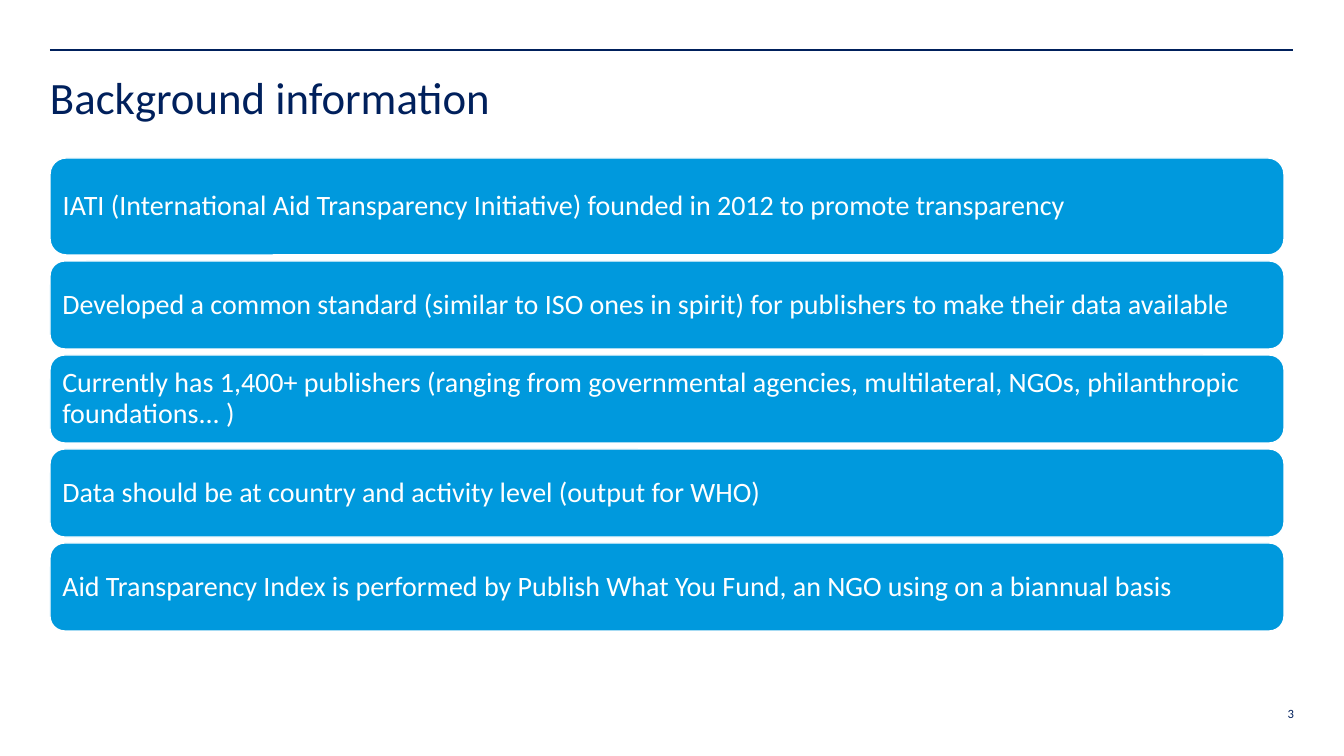
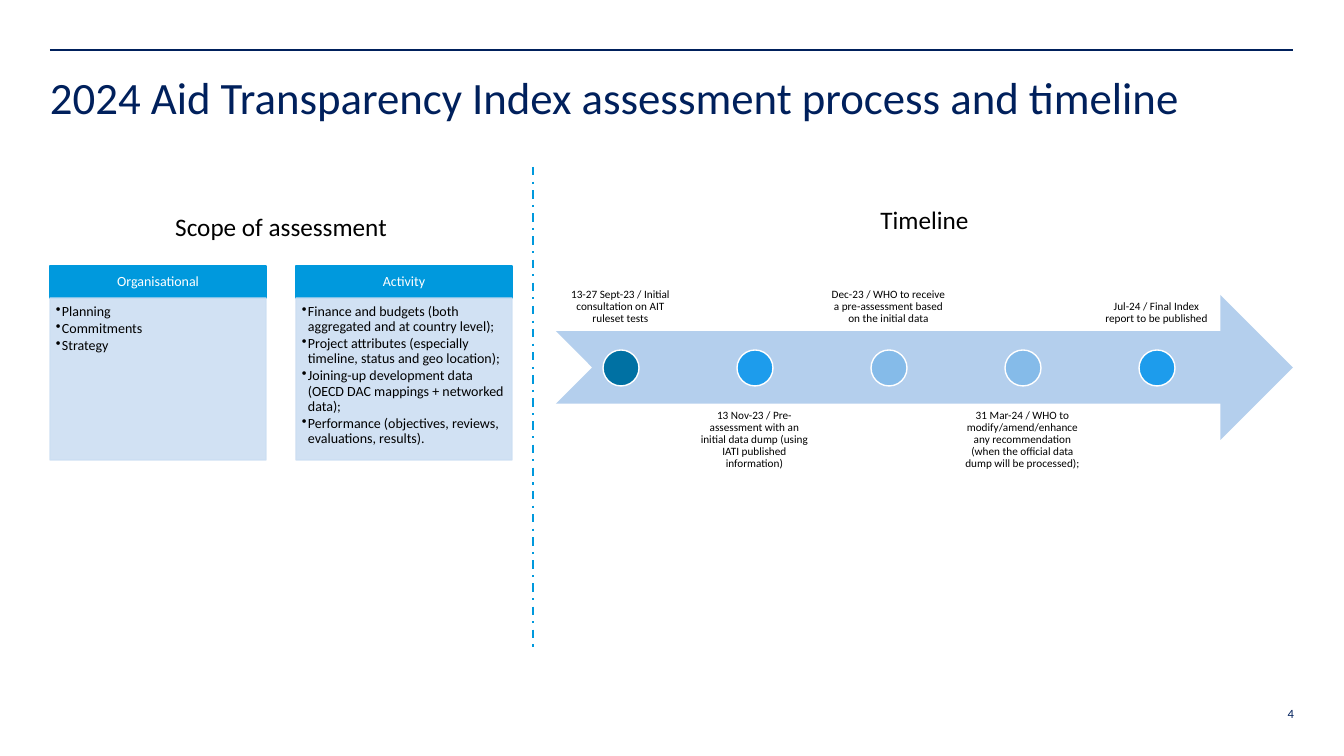
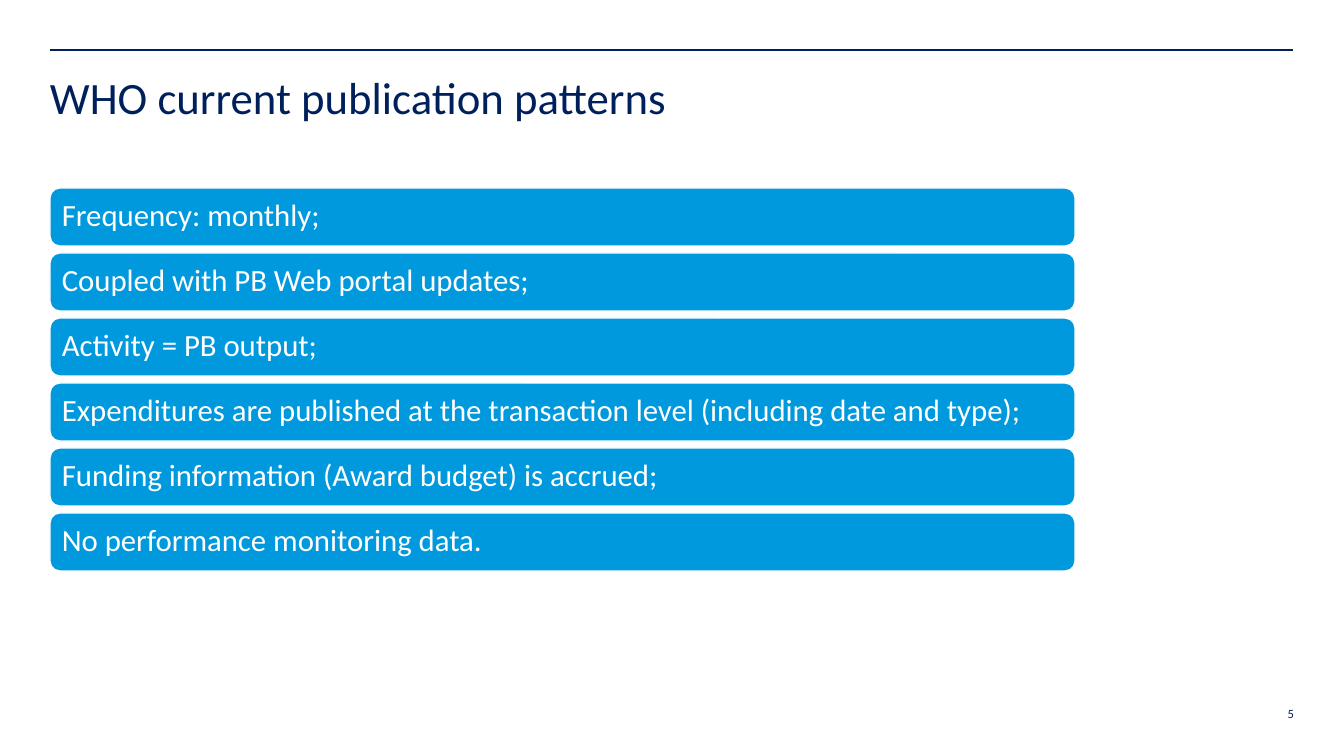
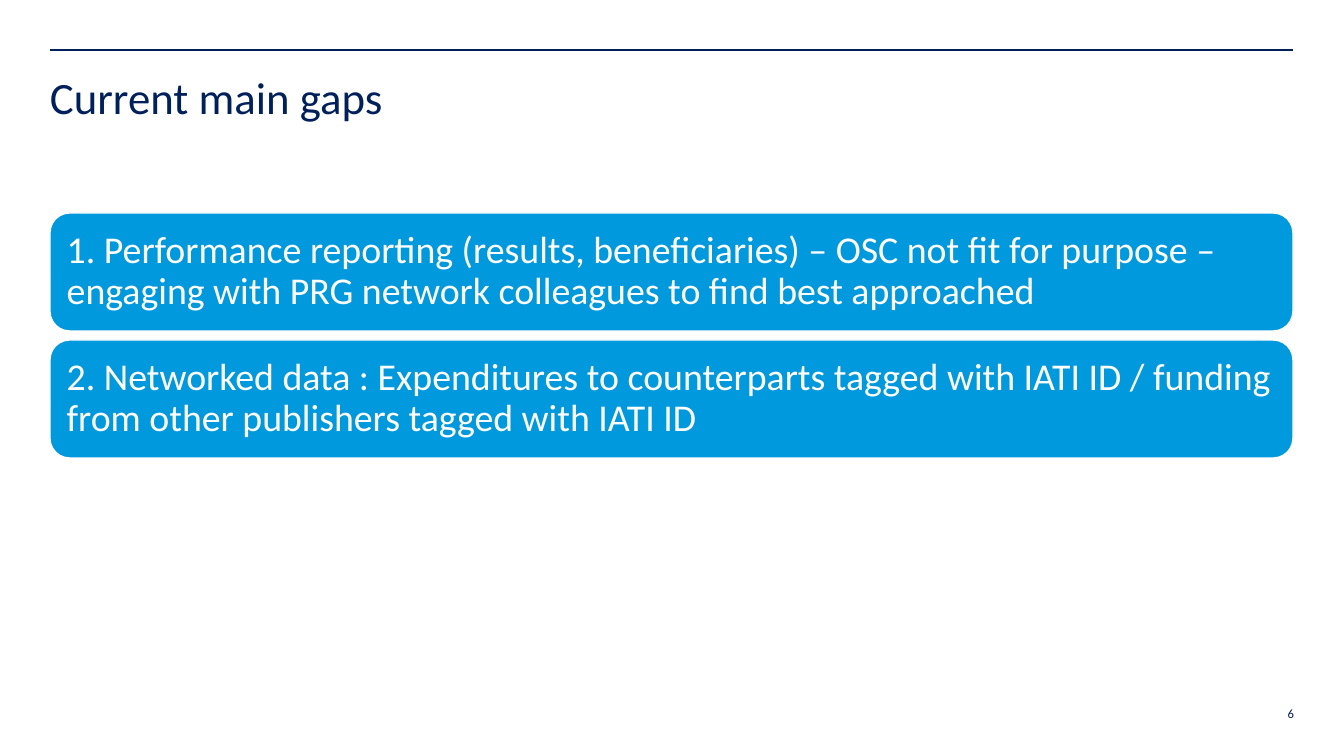
from lxml import etree
from pptx import Presentation
from pptx import util as u
from pptx.dml.color import RGBColor
from pptx.enum import dml, shapes, text
from pptx.oxml.ns import qn

PX = 9071  # EMU in one px
NAVY, BLUE, PALE, WHITE, BLACK = "00205C", "0099DD", "CCDEF2", "FFFFFF", "000000"
LEFT, WIDTH = 50, 1243
ROUND = shapes.MSO_SHAPE.ROUNDED_RECTANGLE
RECT = shapes.MSO_SHAPE.RECTANGLE
CENTER, RIGHT = text.PP_ALIGN.CENTER, text.PP_ALIGN.RIGHT
TOP, MIDDLE, BOTTOM = text.MSO_ANCHOR.TOP, text.MSO_ANCHOR.MIDDLE, text.MSO_ANCHOR.BOTTOM


def rgb(value):
    return RGBColor.from_string(value)


def box(s, content, at, kind=None, fill=None, line=None, size=10, color=BLACK,
        align=text.PP_ALIGN.LEFT, anchor=TOP, insets=(0, 0, 0, 0),
        spacing=0.9, bullet=False, opacity=100):
    """Add a preset shape, or a text box without kind; each line of content is a paragraph."""
    at = [n * PX for n in at]
    if kind is None:
        sp = s.shapes.add_textbox(*at)
    else:
        sp = s.shapes.add_shape(kind, *at)
        sp.shadow.inherit = False
        sp.fill.solid()
        sp.fill.fore_color.rgb = rgb(fill)
        if line:
            sp.line.color.rgb = rgb(line)
            sp.line.width = u.Pt(1)
        else:
            sp.line.fill.background()
        if opacity < 100:
            for clr in sp._element.spPr.iter(qn("a:srgbClr")):
                etree.SubElement(clr, qn("a:alpha"), val=str(opacity * 1000))
    if not content:
        return
    tf = sp.text_frame
    tf.word_wrap = True
    tf.vertical_anchor = anchor
    tf.margin_left, tf.margin_top, tf.margin_right, tf.margin_bottom = [n * PX for n in insets]
    for i, words in enumerate(content.split("\n")):
        p = tf.paragraphs[0] if i == 0 else tf.add_paragraph()
        p.alignment = align
        p.line_spacing = spacing
        if bullet:
            p.space_after = u.Pt(1.5)
            pPr = p._p.get_or_add_pPr()
            pPr.set("marL", str(6 * PX))
            pPr.set("indent", str(-6 * PX))
            etree.SubElement(pPr, qn("a:buChar"), char="•")
        r = p.add_run()
        r.text = words
        r.font.name = "Calibri"
        r.font.size = u.Pt(size)
        r.font.color.rgb = rgb(color)


prs = Presentation()
prs.slide_width, prs.slide_height = 1344 * PX, 756 * PX

# Titles and page numbers
titles = [
    "Background information",
    "2024 Aid Transparency Index assessment process and timeline",
    "WHO current publication patterns",
    "Current main gaps",
]
slides = []
for number, title in enumerate(titles, 3):
    s = prs.slides.add_slide(prs.slide_layouts[6])
    box(s, title, (LEFT, 76, WIDTH, 111), size=32, color=NAVY)
    box(s, str(number), (1252, 706, 42, 35), size=9, color=NAVY, align=RIGHT, spacing=1.0)
    slides.append(s)
background, process, patterns, gaps = slides

# Stacks of bars: slide, top, width, gap, text size, inset, bars as (height, text)
stacks = [
    (background, 158, 1234, 6, 20, 8, [
        (97, "IATI (International Aid Transparency Initiative) founded in 2012 to promote transparency"),
        (88, "Developed a common standard (similar to ISO ones in spirit) for publishers to make their data available"),
        (88, "Currently has 1,400+ publishers (ranging from governmental agencies, multilateral, NGOs, philanthropic foundations... )"),
        (88, "Data should be at country and activity level (output for WHO)"),
        (88, "Aid Transparency Index is performed by Publish What You Fund, an NGO using on a biannual basis"),
    ]),
    (patterns, 188, 1025, 7, 22, 9, [
        (58, "Frequency: monthly;"),
        (58, "Coupled with PB Web portal updates;"),
        (58, "Activity = PB output;"),
        (58, "Expenditures are published at the transaction level (including date and type);"),
        (58, "Funding information (Award budget) is accrued;"),
        (58, "No performance monitoring data."),
    ]),
    (gaps, 213, WIDTH, 9, 27, 11, [
        (118, "1. Performance reporting (results, beneficiaries) – OSC not fit for purpose – engaging with PRG network colleagues to find best approached"),
        (118, "2. Networked data : Expenditures to counterparts tagged with IATI ID / funding from other publishers tagged with IATI ID"),
    ]),
]
for s, top, width, gap, size, inset, bars in stacks:
    for height, words in bars:
        box(s, words, (LEFT, top, width, height), ROUND, BLUE, WHITE, size=size,
            color=WHITE, anchor=MIDDLE, insets=[inset] * 4)
        top += height + gap

# Timeline
box(process, "", (556, 295, 737, 145), shapes.MSO_SHAPE.NOTCHED_RIGHT_ARROW, "B4CFED")
milestones = [
    ("0071A3", "13-27 Sept-23 / Initial consultation on AIT ruleset tests"),
    ("1D9CEC", "13 Nov-23 / Pre-assessment with an initial data dump (using IATI published information)"),
    ("85BBE9", "Dec-23 / WHO to receive a pre-assessment based on the initial data"),
    ("85BBE9", "31 Mar-24 / WHO to modify/amend/enhance any recommendation (when the official data dump will be processed);"),
    ("1D9CEC", "Jul-24 / Final Index report to be published"),
]
for i, (dot, words) in enumerate(milestones):
    left = 557 + 134 * i
    top, anchor = (404, TOP) if i % 2 else (186, BOTTOM)
    box(process, words, (left, top, 127, 145), size=8, align=CENTER, anchor=anchor, insets=[6] * 4)
    box(process, "", (left + 46, 350, 36, 36), shapes.MSO_SHAPE.OVAL, dot, WHITE)

# Scope of assessment
scopes = [
    ("Organisational", "Planning\nCommitments\nStrategy"),
    ("Activity", "Finance and budgets (both aggregated and at country level);\n"
                 "Project attributes (especially timeline, status and geo location);\n"
                 "Joining-up development data (OECD DAC mappings + networked data);\n"
                 "Performance (objectives, reviews, evaluations, results)."),
]
for i, (head, items) in enumerate(scopes):
    left = LEFT + 246 * i
    box(process, head, (left, 266, 216, 32), RECT, BLUE, BLUE, color=WHITE,
        align=CENTER, anchor=MIDDLE, insets=(8, 4, 8, 4))
    box(process, items, (left, 298, 216, 162), RECT, PALE, PALE, insets=(6, 6, 8, 9),
        bullet=True, opacity=90)

for words, at in [("Scope of assessment", (LEFT, 206, 462, 40)), ("Timeline", (556, 199, 737, 40))]:
    box(process, words, at, size=18, align=CENTER, insets=(10, 5, 10, 5), spacing=1.0)

# Top rules and the divider
lines = [(s, (LEFT, 50, LEFT + WIDTH, 50), NAVY, dml.MSO_LINE.SOLID) for s in slides]
lines.append((process, (533, 167, 533, 651), BLUE, dml.MSO_LINE.DASH_DOT))
for s, ends, color, dash in lines:
    line = s.shapes.add_connector(shapes.MSO_CONNECTOR.STRAIGHT, *[n * PX for n in ends])
    line.line.color.rgb = rgb(color)
    line.line.width = u.Pt(1.5)
    line.line.dash_style = dash
    etree.SubElement(line._element.spPr, qn("a:effectLst"))

prs.save("out.pptx")
